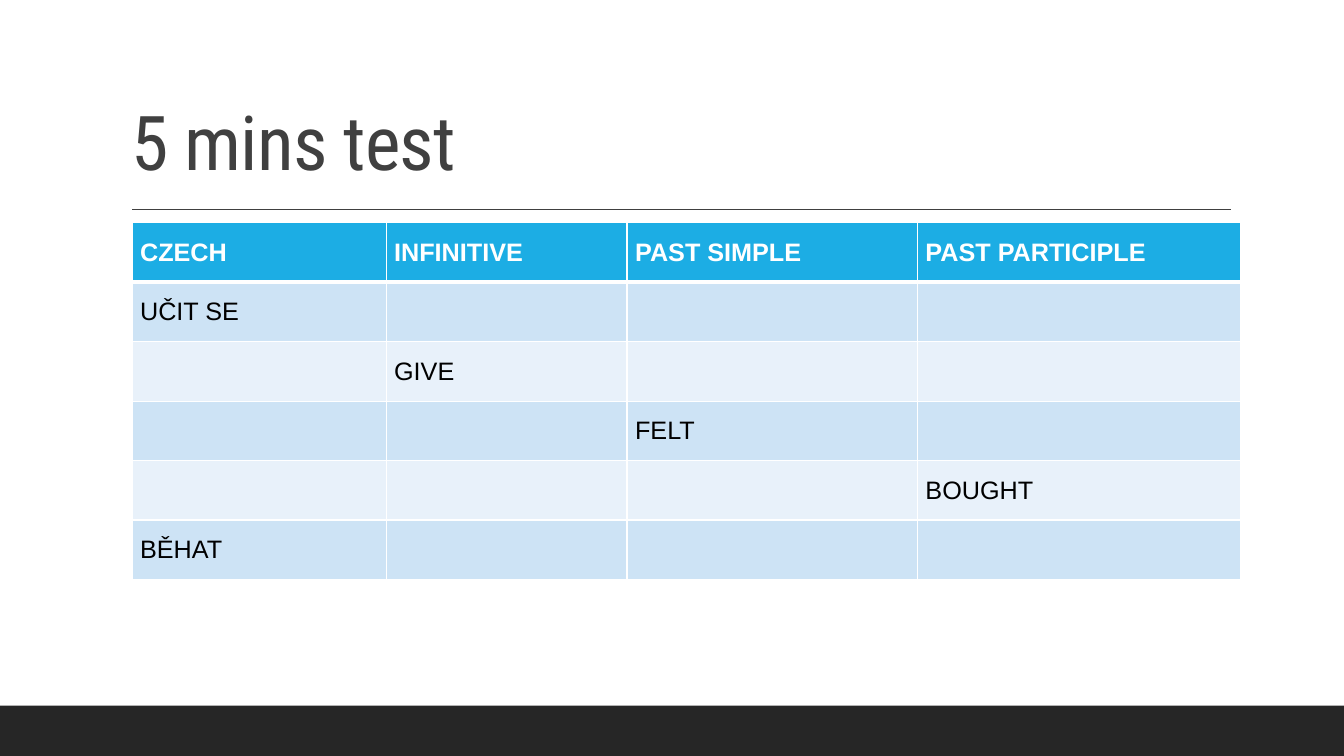
import lxml.etree
import pptx
import pptx.dml.color
import pptx.enum.shapes
import pptx.enum.text
import pptx.oxml.ns
import pptx.util

RGBColor = pptx.dml.color.RGBColor
WHITE = RGBColor(0xFF, 0xFF, 0xFF)
BLACK = RGBColor(0, 0, 0)
CHARCOAL = RGBColor(0x26, 0x26, 0x26)
GRAY = RGBColor(0x40, 0x40, 0x40)
BLUE = RGBColor(0x1C, 0xAD, 0xE4)
BANDS = [RGBColor(0xE8, 0xF1, 0xFA), RGBColor(0xCD, 0xE3, 0xF5)]

COLUMNS, ROWS = 133.3, 75
HEADINGS = ["CZECH", "INFINITIVE", "PAST SIMPLE", "PAST PARTICIPLE"]
VERBS = [
    ["UČIT SE", "", "", ""],
    ["", "GIVE", "", ""],
    ["", "", "FELT", ""],
    ["", "", "", "BOUGHT"],
    ["BĚHAT", "", "", ""],
]


def add_element(parent, tag, **attributes):
    return lxml.etree.SubElement(parent, pptx.oxml.ns.qn(tag), **attributes)


class Page:
    title_font = "Roboto Condensed"
    body_font = "Arial"

    def __init__(self, deck):
        self.slide = deck.slides.add_slide(deck.slide_layouts[5])
        self.shapes = self.slide.shapes
        self.column = deck.slide_width / COLUMNS
        self.row = deck.slide_height / ROWS

    def across(self, columns):
        return round(columns * self.column)

    def down(self, rows):
        return round(rows * self.row)

    def place(self, left, top, width, height):
        return self.across(left), self.down(top), self.across(width), self.down(height)

    def style(self, para, name, size, color, bold=False):
        para.font.name = name
        para.font.size = pptx.util.Pt(size)
        para.font.color.rgb = color
        para.font.bold = bold

    def title(self, text, *area):
        box = self.shapes.title
        box.left, box.top, box.width, box.height = self.place(*area)
        frame = box.text_frame
        frame.text = text
        frame.word_wrap = True
        frame.auto_size = pptx.enum.text.MSO_AUTO_SIZE.NONE
        frame.vertical_anchor = pptx.enum.text.MSO_ANCHOR.BOTTOM
        para = frame.paragraphs[0]
        para.alignment = pptx.enum.text.PP_ALIGN.LEFT
        para.line_spacing = 0.9
        self.style(para, self.title_font, 54, GRAY)
        para.runs[0].font._element.set("spc", "-50")

    def bar(self, color, *area):
        box = self.shapes.add_shape(
            pptx.enum.shapes.MSO_SHAPE.RECTANGLE, *self.place(*area))
        box.shadow.inherit = False
        box.fill.solid()
        box.fill.fore_color.rgb = color
        box.line.fill.background()

    def rule(self, color, left, right, top):
        line = self.shapes.add_connector(
            pptx.enum.shapes.MSO_CONNECTOR.STRAIGHT,
            self.across(left), self.down(top), self.across(right), self.down(top))
        line.line.color.rgb = color
        line.line.width = pptx.util.Pt(1)
        add_element(line._element.spPr, "a:effectLst")

    def borders(self, cell, top, bottom):
        properties = cell._tc.get_or_add_tcPr()
        for side, points in zip("LRTB", (1, 1, top, bottom)):
            edge = add_element(properties, f"a:ln{side}", w=str(pptx.util.Pt(points)))
            fill = add_element(edge, "a:solidFill")
            add_element(fill, "a:srgbClr", val=str(WHITE))

    def cell(self, cell, text, index):
        header = index == 0
        self.borders(cell, 3 if index == 1 else 1, 3 if header else 1)
        cell.fill.solid()
        cell.fill.fore_color.rgb = BLUE if header else BANDS[index % 2]
        cell.vertical_anchor = pptx.enum.text.MSO_ANCHOR.MIDDLE
        cell.margin_left = cell.margin_right = self.across(0.8)
        cell.margin_top = cell.margin_bottom = self.down(0.4)
        cell.text = text
        self.style(cell.text_frame.paragraphs[0], self.body_font, 18,
                   WHITE if header else BLACK, header)

    def table(self, records, left, top, widths, height):
        area = self.place(left, top, sum(widths), height * len(records))
        table = self.shapes.add_table(len(records), len(widths), *area).table
        for column, width in zip(table.columns, widths):
            column.width = self.across(width)
        for index, record in enumerate(records):
            table.rows[index].height = self.down(height)
            for position, text in enumerate(record):
                self.cell(table.cell(index, position), text, index)


def main():
    deck = pptx.Presentation()
    deck.slide_width = pptx.util.Inches(13.33)
    deck.slide_height = pptx.util.Inches(7.5)
    page = Page(deck)
    page.bar(CHARCOAL, 0, 70, COLUMNS, 5)
    page.rule(GRAY, 13.1, 122.1, 20.8)
    page.title("5 mins test", 12, 3.1, 110, 15.9)
    page.table([HEADINGS] + VERBS, 13.1, 22.1, [25.2, 23.9, 28.8, 32.1], 5.9)
    deck.save("out.pptx")


if __name__ == "__main__":
    main()
